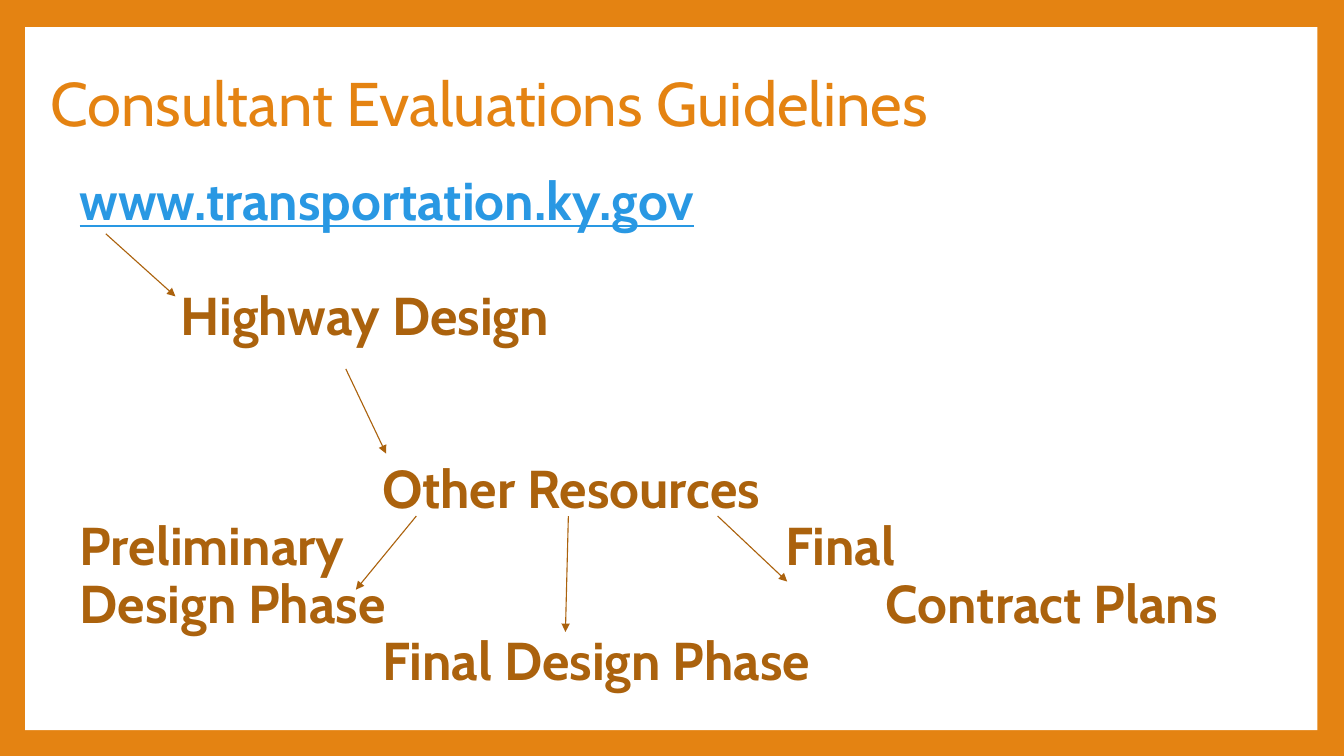
"""Build the Consultant Evaluations Guidelines slide."""
from lxml.etree import SubElement
from pptx import Presentation
from pptx.dml.color import RGBColor
from pptx.enum.shapes import MSO_CONNECTOR, MSO_SHAPE
from pptx.enum.text import MSO_ANCHOR, PP_ALIGN
from pptx.oxml.ns import qn
from pptx.util import Pt

ORANGE = RGBColor(0xE4, 0x83, 0x12)
BROWN = RGBColor(0xAB, 0x62, 0x0D)
BLUE = RGBColor(0x29, 0x98, 0xE3)
WHITE = RGBColor(0xFF, 0xFF, 0xFF)
FONT = "Cabin"
LEFT, TOP = 56.9, 124.8
TAB_WIDTH, LINE_PITCH = 72, 41.1


def format_paragraph(paragraph, size, color, bold):
    paragraph.alignment = PP_ALIGN.LEFT
    paragraph.line_spacing = 0.9
    paragraph.font.name = FONT
    paragraph.font.size = Pt(size)
    paragraph.font.bold = bold
    paragraph.font.color.rgb = color


presentation = Presentation()
presentation.slide_width = Pt(960)
presentation.slide_height = Pt(540)
slide = presentation.slides.add_slide(presentation.slide_layouts[5])
slide.background.fill.solid()
slide.background.fill.fore_color.rgb = ORANGE

panel = slide.shapes.add_shape(MSO_SHAPE.RECTANGLE, Pt(18), Pt(19.4), Pt(923), Pt(521.6 - 19.4))
panel.shadow.inherit = False
panel.fill.solid()
panel.fill.fore_color.rgb = WHITE
panel.line.fill.background()
slide.shapes._spTree.insert(2, panel._element)

title = slide.shapes.title
title.left, title.top, title.width, title.height = Pt(28.8), Pt(23), Pt(777.6), Pt(106.6)
title.text_frame.text = "Consultant Evaluations Guidelines"
title.text_frame.vertical_anchor = MSO_ANCHOR.MIDDLE
format_paragraph(title.text_frame.paragraphs[0], 44, ORANGE, False)

labels = [
    ("www.transportation.ky.gov", 0, 0, 460, BLUE),
    ("Highway Design", 1, 2, 290, BROWN),
    ("Other Resources", 3, 5, 290, BROWN),
    ("Preliminary\nDesign Phase", 0, 6, 230, BROWN),
    ("Final", 7, 6, 100, BROWN),
    ("Contract Plans", 8, 7, 260, BROWN),
    ("Final Design Phase", 3, 8, 330, BROWN),
]
for text, column, row, width, color in labels:
    lines = text.split("\n")
    label = slide.shapes.add_textbox(
        Pt(LEFT + column * TAB_WIDTH), Pt(TOP + row * LINE_PITCH),
        Pt(width), Pt(len(lines) * LINE_PITCH))
    frame = label.text_frame
    frame.word_wrap = True
    frame.margin_left = frame.margin_right = frame.margin_top = frame.margin_bottom = 0
    frame.text = text
    for paragraph in frame.paragraphs:
        format_paragraph(paragraph, 38, color, True)
        paragraph.font.underline = color == BLUE

arrows = [
    (75.6, 167, 125.3, 211.7),
    (247, 263.5, 275.8, 324),
    (297.4, 368.6, 254.2, 421.2),
    (406, 368.6, 403.9, 451.4),
    (512.6, 368.6, 562.3, 415.4),
]
for start_x, start_y, end_x, end_y in arrows:
    arrow = slide.shapes.add_connector(
        MSO_CONNECTOR.STRAIGHT, Pt(start_x), Pt(start_y), Pt(end_x), Pt(end_y))
    arrow.line.color.rgb = BROWN
    arrow.line.width = Pt(0.79)
    SubElement(arrow.line._get_or_add_ln(), qn("a:tailEnd"), type="triangle")
    SubElement(arrow._element.spPr, qn("a:effectLst"))

presentation.save("out.pptx")
